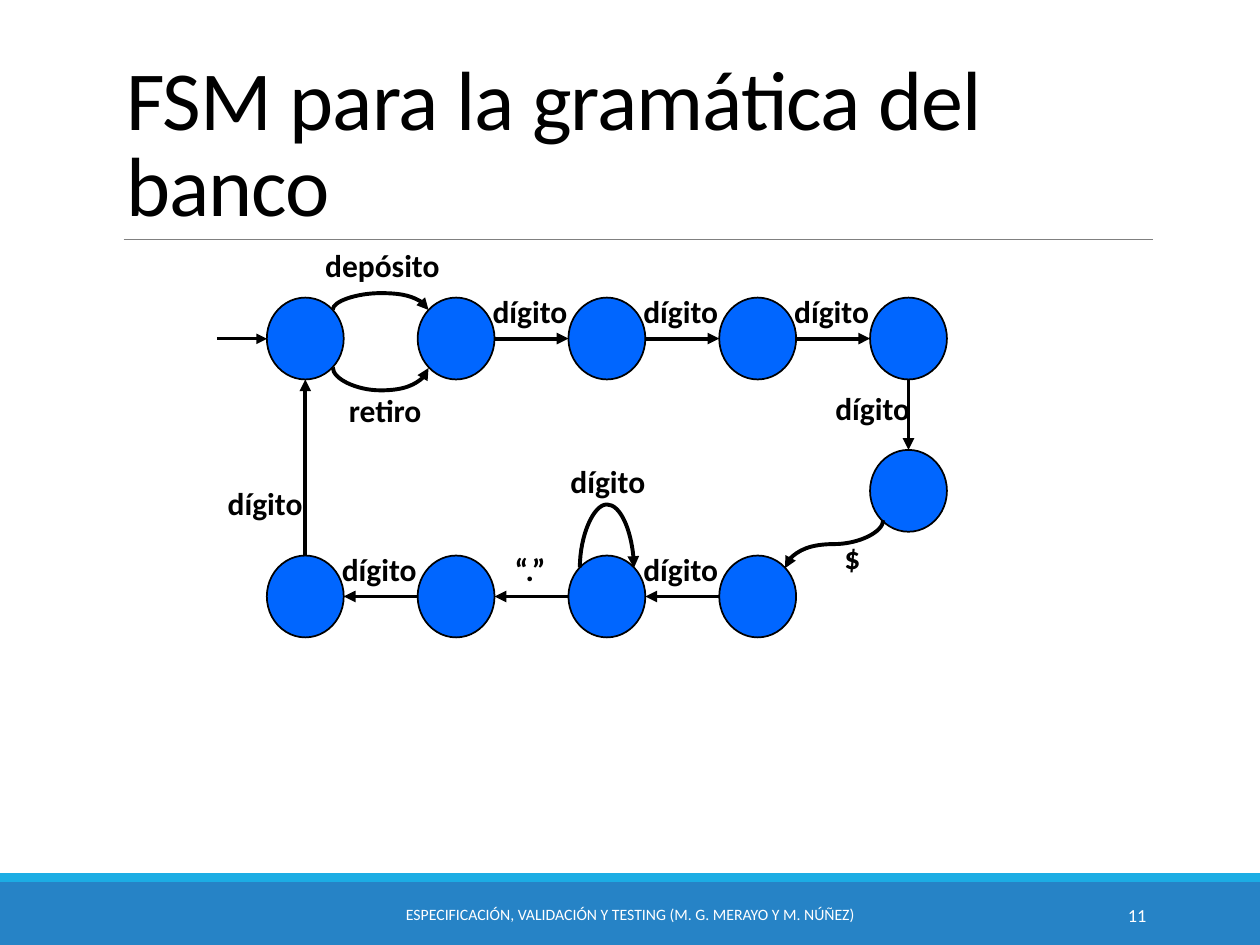
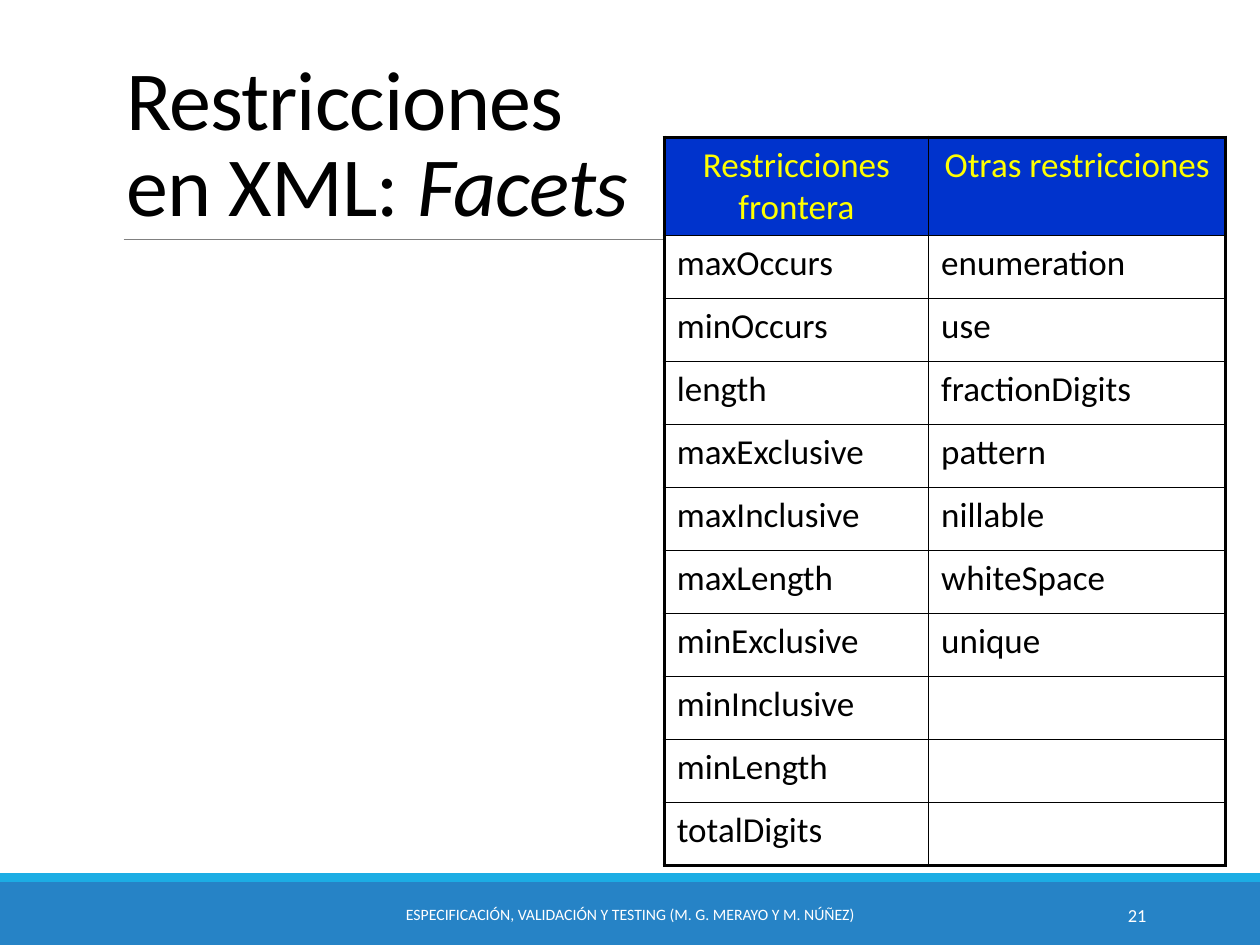
from pptx import Presentation
from pptx.dml.color import RGBColor
from pptx.enum.shapes import MSO_CONNECTOR, MSO_SHAPE
from pptx.enum.text import MSO_ANCHOR, MSO_AUTO_SIZE, PP_ALIGN
from pptx.oxml.ns import qn
from pptx.util import Cm, Pt
from lxml.etree import SubElement

HUES = {"ink": "000000", "paper": "FFFFFF", "band": "2683C6", "strip": "1CADE4",
        "rule": "808080", "state": "0066FF", "head": "0033CC", "gold": "FFFF00"}
HUES = {name: RGBColor.from_string(code) for name, code in HUES.items()}
FACE = "Calibri"
FOOT = "ESPECIFICACIÓN, VALIDACIÓN Y TESTING (M. G. MERAYO Y M. NÚÑEZ)"


def write(frame, text, size, hue="ink", align=PP_ALIGN.LEFT, **extra):
    """Add a run to the first paragraph and format it."""
    para = frame.paragraphs[0]
    para.alignment = align
    run = para.add_run()
    run.text = text
    run.font.color.rgb = HUES[hue]
    for key, value in {"name": FACE, "size": Pt(size), **extra}.items():
        setattr(run.font, key, value)
    return run


def link(slide, kind, ends, width, hue="ink", tip=True):
    """Draw a line without shadow, with an arrowhead if wanted."""
    line = slide.shapes.add_connector(kind, *[Cm(v) for v in ends])
    line.line.width = Pt(width)
    line.line.color.rgb = HUES[hue]
    props = line._element.spPr
    if tip:
        SubElement(props.find(qn("a:ln")), qn("a:tailEnd"), type="triangle")
    SubElement(props, qn("a:effectLst"))
    return props


deck = Presentation()
deck.slide_width, deck.slide_height = Cm(25.4), Cm(19.05)

# Shared frame: bands, rule, title, footer and page number
pages = [
    ("11", 21.9, [("FSM para la gramática del banco", False)]),
    ("21", 11.02, [("Restricciones en XML: ", False), ("Facets", True)]),
]
slides = []
for number, wide, parts in pages:
    slide = deck.slides.add_slide(deck.slide_layouts[5])
    slides.append(slide)
    for hue, top, high in [("band", 17.78, 1.27), ("strip", 17.6, 0.18)]:
        band = slide.shapes.add_shape(MSO_SHAPE.RECTANGLE, 0, Cm(top), Cm(25.4), Cm(high))
        band.shadow.inherit = False
        band.fill.solid()
        band.fill.fore_color.rgb = HUES[hue]
        band.line.fill.background()
    link(slide, MSO_CONNECTOR.STRAIGHT, (2.49, 4.83, 23.24, 4.83), 0.5, "rule", False)

    title = slide.shapes.title
    place = {"left": Cm(2.29), "top": Cm(0.79), "width": Cm(wide), "height": Cm(4.04)}
    for key, value in place.items():
        setattr(title, key, value)
    frame = title.text_frame
    look = {"auto_size": MSO_AUTO_SIZE.NONE, "word_wrap": True,
            "vertical_anchor": MSO_ANCHOR.BOTTOM}
    for key, value in look.items():
        setattr(frame, key, value)
    frame.paragraphs[0].line_spacing = 0.85
    for text, slant in parts:
        run = write(frame, text, 48, italic=slant)
        run._r.get_or_add_rPr().set("spc", "-50")

    notes = [(7.67, 10.06, FOOT, 9, PP_ALIGN.CENTER),
             (20.62, 2.74, number, 10.5, PP_ALIGN.RIGHT)]
    for left, wide, text, size, align in notes:
        box = slide.shapes.add_textbox(Cm(left), Cm(17.93), Cm(wide), Cm(1.02))
        box.text_frame.word_wrap = True
        box.text_frame.vertical_anchor = MSO_ANCHOR.MIDDLE
        write(box.text_frame, text, size, "paper", align)

fsm, facets = slides

# State machine: circles on a grid of five columns
WIDE, HIGH = 1.55, 1.65
cols = [5.38 + 3.04 * i for i in range(5)]
TOP, SIDE, BASE = 6.0, 9.07, 11.2
spots = [(x, TOP) for x in cols] + [(cols[4], SIDE)] + [(x, BASE) for x in cols[:4]]
for x, y in spots:
    state = fsm.shapes.add_shape(MSO_SHAPE.OVAL, Cm(x), Cm(y), Cm(WIDE), Cm(HIGH))
    state.shadow.inherit = False
    state.fill.solid()
    state.fill.fore_color.rgb = HUES["state"]
    state.line.color.rgb = HUES["ink"]
    state.line.width = Pt(1)

# Straight arrows: right on top, left on the base, two upright, one entry
ends = [(cols[i] + WIDE, TOP + HIGH / 2, cols[i + 1], TOP + HIGH / 2) for i in (1, 2, 3)]
ends += [(cols[i + 1], BASE + HIGH / 2, cols[i] + WIDE, BASE + HIGH / 2) for i in (0, 1, 2)]
ends += [(cols[4] + WIDE / 2, TOP + HIGH, cols[4] + WIDE / 2, SIDE),
         (cols[0] + WIDE / 2, BASE, cols[0] + WIDE / 2, TOP + HIGH)]
for span in ends:
    link(fsm, MSO_CONNECTOR.STRAIGHT, span, 2.25)
link(fsm, MSO_CONNECTOR.STRAIGHT, (4.37, 6.83, cols[0], 6.83), 1.5)

# Curved arrows: ends before the turn, turn in degrees, bend as share of width
curves = [
    ((7.67, 7.21, 7.68, 5.28), 90, -33),
    ((7.68, 6.45, 7.67, 8.38), 270, 46),
    ((12.23, 11.99, 12.24, 10.9), 90, -127),
    ((16.33, 9.98, 17.3, 11.96), 90, 0.5),
]
for span, turn, bend in curves:
    props = link(fsm, MSO_CONNECTOR.CURVE, span, 2.25)
    props.find(qn("a:xfrm")).set("rot", str(turn * 60000))
    guides = props.find(qn("a:prstGeom")).find(qn("a:avLst"))
    SubElement(guides, qn("a:gd"), name="adj1", fmla=f"val {int(bend * 100000)}")

# Arrow labels
labels = [(cols[i] + 1.21, TOP - 0.23, 2.11, "dígito") for i in (1, 2, 3)]
labels += [(cols[i] + 1.21, BASE - 0.23, 2.11, text)
           for i, text in enumerate(["dígito", "“.”", "dígito"])]
labels += [(6.2, 4.83, 3.02, "depósito"), (6.48, 7.75, 2.57, "retiro"),
           (16.54, 7.72, 2.11, "dígito"), (4.29, 9.63, 2.11, "dígito"),
           (11.2, 9.19, 2.11, "dígito"), (16.13, 10.72, 2.11, "$")]
for x, y, wide, text in labels:
    box = fsm.shapes.add_textbox(Cm(x), Cm(y), Cm(wide), Cm(1.02))
    box.text_frame.word_wrap = True
    write(box.text_frame, text, 18, align=PP_ALIGN.CENTER, bold=True)

# Table of restrictions
bounds = ["Restricciones frontera", "maxOccurs", "minOccurs", "length", "maxExclusive",
          "maxInclusive", "maxLength", "minExclusive", "minInclusive", "minLength",
          "totalDigits"]
others = ["Otras restricciones", "enumeration", "use", "fractionDigits", "pattern",
          "nillable", "whiteSpace", "unique", "", "", ""]
last = len(bounds) - 1
grid = facets.shapes.add_table(last + 1, 2, Cm(13.39), Cm(2.77), Cm(11.32), Cm(14.68)).table
grid.first_row = grid.horz_banding = False
for col, wide in zip(grid.columns, (5.33, 5.99)):
    col.width = Cm(wide)
for r, pair in enumerate(zip(bounds, others)):
    grid.rows[r].height = Cm(1.27 if r else 1.98)
    for c, text in enumerate(pair):
        cell = grid.cell(r, c)
        edges = {"a:lnL": c == 0, "a:lnR": c == 1, "a:lnT": r == 0, "a:lnB": r == last}
        for tag, outer in edges.items():
            edge = SubElement(cell._tc.get_or_add_tcPr(), qn(tag),
                              w=str(Pt(2.25 if outer else 1)))
            fill = SubElement(edge, qn("a:solidFill"))
            SubElement(fill, qn("a:srgbClr"), val=str(HUES["ink"]))
        cell.fill.solid()
        cell.fill.fore_color.rgb = HUES["paper" if r else "head"]
        if text:
            write(cell.text_frame, text, 20, "ink" if r else "gold",
                  PP_ALIGN.LEFT if r else PP_ALIGN.CENTER)

deck.save("out.pptx")
